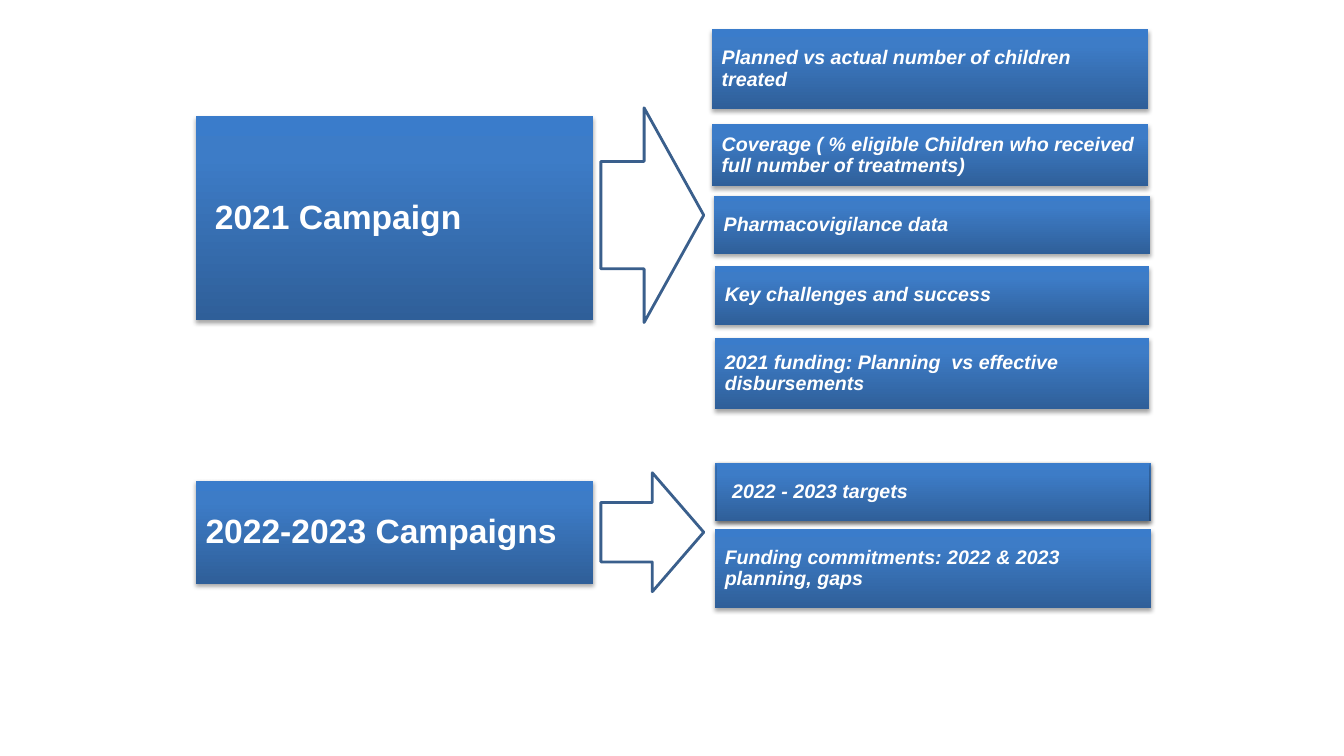
from copy import deepcopy

from lxml import etree
from pptx import Presentation
from pptx.dml.color import RGBColor
from pptx.enum.shapes import MSO_SHAPE
from pptx.enum.text import MSO_ANCHOR, PP_ALIGN
from pptx.oxml.ns import qn
from pptx.util import Inches, Pt

RECTANGLE, ARROW = MSO_SHAPE.RECTANGLE, MSO_SHAPE.RIGHT_ARROW
MIDDLE, LEFT = MSO_ANCHOR.MIDDLE, PP_ALIGN.LEFT

COLORS = {
    "dark": "2F5F99", "mid": "3D7CC7", "light": "3A7CCB",
    "outline": "3A5F8C", "white": "FFFFFF", "shadow": "000000",
}
GRADIENT = [(0, "dark"), (0.8, "mid"), (1, "light")]
SHADOW = {"blurRad": Pt(3.1), "dist": Pt(1.8), "dir": 5400000, "rotWithShape": 0}
SHADOW_ALPHA = 35000

TITLE_FORMAT = {"name": "Arial", "size": Pt(24), "bold": True}
TOPIC_FORMAT = {"name": "Arial", "size": Pt(14), "bold": True, "italic": True}
FRAME_FORMAT = {
    "word_wrap": True, "vertical_anchor": MIDDLE,
    "margin_left": Inches(0.1), "margin_right": Inches(0.1),
    "margin_top": Inches(0.1), "margin_bottom": Inches(0.1),
}

# Campaigns: title (text, top, height), arrow (top, height, head length),
# topics (text, left, top, width, height)
CAMPAIGNS = [
    {
        "title": (" 2021 Campaign", 1.15, 2.03),
        "arrow": (1.07, 2.13, 0.58),
        "topics": [
            ("Planned vs actual number of children treated", 7.06, 0.29, 4.33, 0.79),
            ("Coverage ( % eligible Children who received full number of treatments)",
             7.06, 1.23, 4.33, 0.62),
            ("Pharmacovigilance data", 7.08, 1.94, 4.33, 0.58),
            ("Key challenges and success", 7.09, 2.64, 4.31, 0.58),
            ("2021 funding: Planning  vs effective disbursements", 7.09, 3.35, 4.31, 0.71),
        ],
    },
    {
        "title": ("2022-2023 Campaigns", 4.77, 1.02),
        "arrow": (4.69, 1.18, 0.5),
        "topics": [
            ("", 7.09, 4.59, 4.33, 0.58),  # backing panel of the targets box
            (" 2022 - 2023 targets", 7.11, 4.59, 4.29, 0.58),
            ("Funding commitments: 2022 & 2023 planning, gaps", 7.09, 5.25, 4.33, 0.78),
        ],
    },
]
TITLE_LEFT, TITLE_WIDTH = 1.94, 3.94
ARROW_LEFT, ARROW_WIDTH = 5.96, 1.02


def color(name):
    return RGBColor.from_string(COLORS[name])


def apply_format(target, values):
    for name, value in values.items():
        setattr(target, name, value)


def add_plain_shape(slide, kind, box):
    shape = slide.shapes.add_shape(kind, *map(Inches, box))
    shape.shadow.inherit = False
    return shape


def fill_gradient(shape):
    shape.fill.gradient()
    shape.fill.gradient_angle = 90
    stop_list = shape.element.spPr.find(".//" + qn("a:gsLst"))
    stop_list.append(deepcopy(stop_list[0]))
    for stop, (position, name) in zip(shape.fill.gradient_stops, GRADIENT):
        stop.position = position
        stop.color.rgb = color(name)


def add_shadow(shape):
    effects = shape.element.spPr.find(qn("a:effectLst"))
    shadow = etree.SubElement(effects, qn("a:outerShdw"),
                              {key: str(value) for key, value in SHADOW.items()})
    tint = etree.SubElement(shadow, qn("a:srgbClr"), val=COLORS["shadow"])
    etree.SubElement(tint, qn("a:alpha"), val=str(SHADOW_ALPHA))


def add_box(slide, text, box, font_format):
    shape = add_plain_shape(slide, RECTANGLE, box)
    fill_gradient(shape)
    shape.line.fill.background()
    add_shadow(shape)
    if not text:
        return
    apply_format(shape.text_frame, FRAME_FORMAT)
    paragraph = shape.text_frame.paragraphs[0]
    apply_format(paragraph, {"alignment": LEFT, "line_spacing": 0.9})
    run = paragraph.add_run()
    run.text = text
    apply_format(run.font, font_format)
    run.font.color.rgb = color("white")


def add_arrow(slide, top, height, head):
    shape = add_plain_shape(slide, ARROW, (ARROW_LEFT, top, ARROW_WIDTH, height))
    shape.adjustments[1] = head
    shape.fill.solid()
    shape.fill.fore_color.rgb = color("white")
    shape.line.color.rgb = color("outline")
    shape.line.width = Pt(2)


def main():
    presentation = Presentation()
    presentation.slide_width = Inches(13.33)
    presentation.slide_height = Inches(7.5)
    slide = presentation.slides.add_slide(presentation.slide_layouts[6])

    # Each campaign: title box, arrow, topic boxes
    for campaign in CAMPAIGNS:
        text, top, height = campaign["title"]
        add_box(slide, text, (TITLE_LEFT, top, TITLE_WIDTH, height), TITLE_FORMAT)
        add_arrow(slide, *campaign["arrow"])
        for topic, *box in campaign["topics"]:
            add_box(slide, topic, box, TOPIC_FORMAT)

    presentation.save("out.pptx")


if __name__ == "__main__":
    main()
